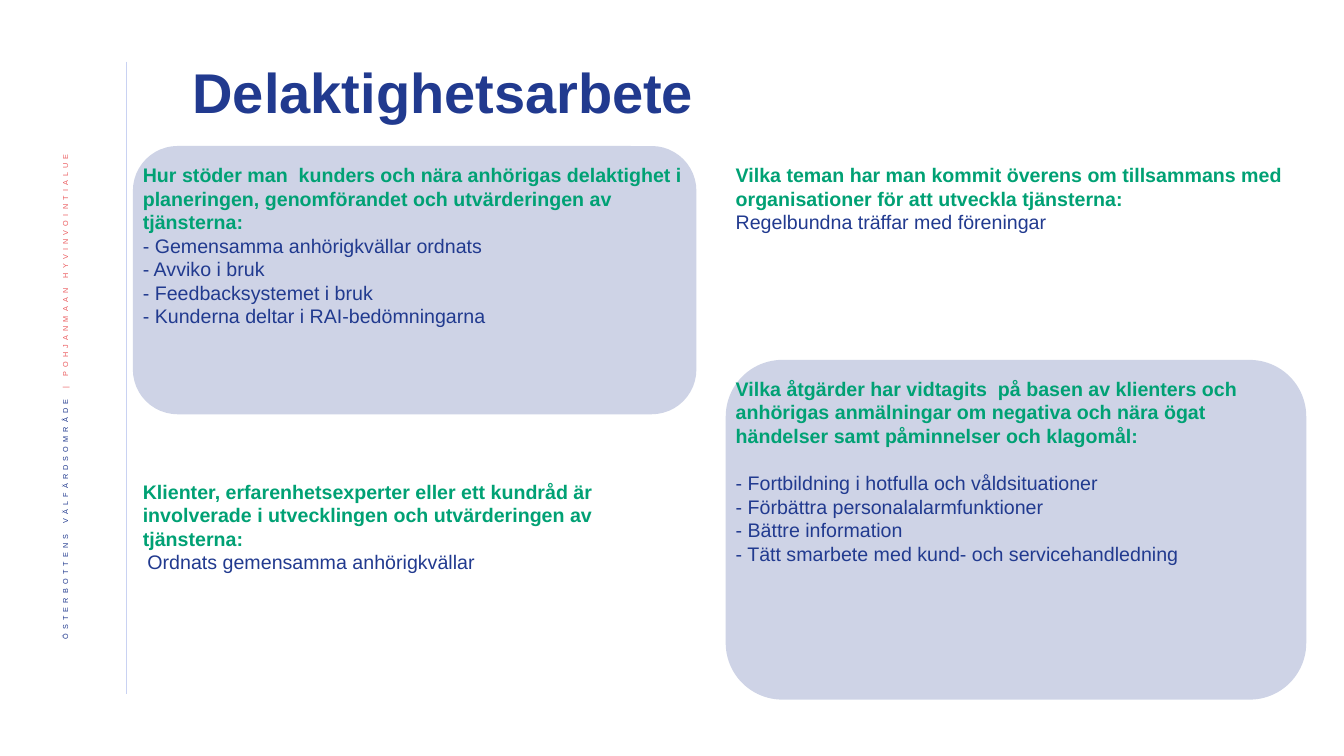
from lxml.etree import SubElement
from pptx import Presentation
from pptx.dml.color import RGBColor
from pptx.enum.shapes import MSO_CONNECTOR as Link, MSO_SHAPE as Kind
from pptx.enum.text import MSO_ANCHOR as Anchor, PP_ALIGN as Align
from pptx.oxml.ns import qn
from pptx.util import Cm, Pt

HUES = {"navy": "213A8F", "green": "00A174", "coral": "EB5C5F", "rule": "C9D2F2"}
FACE = "Arial"
TITLE = "Delaktighetsarbete"
SIDE = [("ÖSTERBOTTENS VÄLFÄRDSOMRÅDE ", "navy"),
        ("| POHJANMAAN HYVINVOINTIALUE ", "coral")]

# Column left and width in cm
COLS = {"left": (3.35, 14.2), "right": (18.29, 14.63)}
# Panel: column, top and height in cm
PANELS = [("left", 3.68, 6.76), ("right", 9.07, 8.56)]
# Topic: column, top, height, gap under heading (pt), indent (pt), heading, lines
TOPICS = [
    ("left", 3.98, 5.05, 0, 0,
     "Hur stöder man  kunders och nära anhörigas delaktighet i planeringen, "
     "genomförandet och utvärderingen av tjänsterna:",
     ["- Gemensamma anhörigkvällar ordnats",
      "- Avviko i bruk",
      "- Feedbacksystemet i bruk",
      "- Kunderna deltar i RAI-bedömningarna"]),
    ("right", 3.98, 2.06, 0, 0,
     "Vilka teman har man kommit överens om tillsammans med organisationer "
     "för att utveckla tjänsterna:",
     ["Regelbundna träffar med föreningar"]),
    ("left", 11.96, 3.25, 0, 3.3,
     "Klienter, erfarenhetsexperter eller ett kundråd är involverade i "
     "utvecklingen och utvärderingen av tjänsterna:",
     ["Ordnats gemensamma anhörigkvällar"]),
    ("right", 9.37, 5.05, 16.8, 0,
     "Vilka åtgärder har vidtagits  på basen av klienters och anhörigas "
     "anmälningar om negativa och nära ögat händelser samt påminnelser och "
     "klagomål:",
     ["- Fortbildning i hotfulla och våldsituationer",
      "- Förbättra personalalarmfunktioner",
      "- Bättre information",
      "- Tätt smarbete med kund- och servicehandledning"]),
]


def hue(name):
    return RGBColor.from_string(HUES[name])


def style(font, size, color, bold=False):
    font.name, font.size, font.bold = FACE, Pt(size), bold
    font.color.rgb = hue(color)


def add_rule(shapes):
    line = shapes.add_connector(Link.STRAIGHT, Cm(3.18), Cm(1.55), Cm(3.18), Cm(17.48))
    line.line.color.rgb = hue("rule")
    line.line.width = Pt(0.5)
    SubElement(line._element.spPr, qn("a:effectLst"))


def add_side(shapes):
    """Add the small raised text that runs up the left edge."""
    frame = shapes.add_textbox(Cm(1.05), Cm(3.48), Cm(1.32), Cm(14.55)).text_frame
    frame.word_wrap = True
    frame.vertical_anchor = Anchor.MIDDLE
    frame._txBody.bodyPr.set("vert", "vert270")
    para = frame.paragraphs[0]
    para.alignment, para.line_spacing = Align.RIGHT, 0.9
    for text, color in SIDE:
        run = para.add_run()
        run.text = text
        style(run.font, 9, color)
        props = run.font._element
        props.set("baseline", "30000")
        props.set("spc", "300")


def add_title(slide):
    title = slide.shapes.title
    title.left, title.top, title.width, title.height = Cm(4.6), Cm(1.14), Cm(25.35), Cm(2.51)
    frame = title.text_frame
    frame.text = TITLE
    frame.word_wrap = True
    frame.vertical_anchor = Anchor.MIDDLE
    para = frame.paragraphs[0]
    para.alignment, para.line_spacing = Align.LEFT, 0.9
    style(para.font, 40, "navy", True)


def add_panel(shapes, col, top, height):
    left, width = COLS[col]
    panel = shapes.add_shape(Kind.ROUNDED_RECTANGLE, Cm(left), Cm(top), Cm(width), Cm(height))
    panel.shadow.inherit = False
    panel.line.fill.background()
    panel.fill.solid()
    panel.fill.fore_color.rgb = hue("navy")
    tint = panel._element.spPr.find(qn("a:solidFill"))[0]
    SubElement(tint, qn("a:alpha")).set("val", "22000")


def add_topic(shapes, col, top, height, gap, indent, head, lines):
    left, width = COLS[col]
    frame = shapes.add_textbox(Cm(left), Cm(top), Cm(width), Cm(height)).text_frame
    frame.word_wrap = True
    first = frame.paragraphs[0]
    first.text = head
    style(first.font, 14, "green", True)
    if gap:
        first.space_after = Pt(gap)
    for text in lines:
        para = frame.add_paragraph()
        para.text = text
        if indent:
            para._p.get_or_add_pPr().set("marL", str(Pt(indent)))
        style(para.font, 14, "navy")


def main():
    deck = Presentation()
    deck.slide_width, deck.slide_height = Cm(33.87), Cm(19.05)
    slide = deck.slides.add_slide(deck.slide_layouts[5])
    add_rule(slide.shapes)
    add_side(slide.shapes)
    add_title(slide)
    for panel in PANELS:
        add_panel(slide.shapes, *panel)
    for topic in TOPICS:
        add_topic(slide.shapes, *topic)
    deck.save("out.pptx")


if __name__ == "__main__":
    main()
